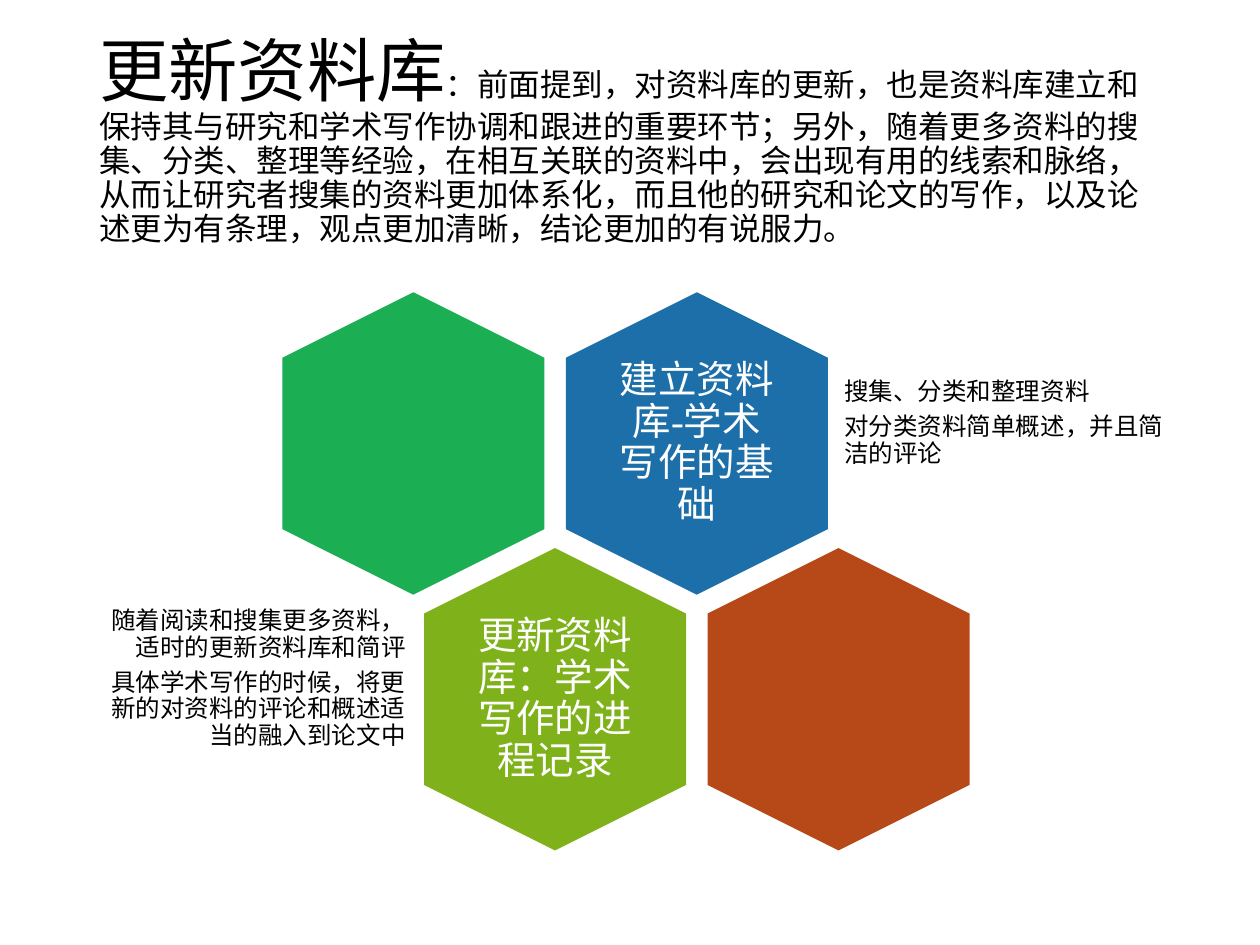
from pptx import Presentation
from pptx.dml.color import RGBColor
from pptx.enum import shapes, text
from pptx.util import Inches, Pt

BLACK = RGBColor(0x00, 0x00, 0x00)
WHITE = RGBColor(0xFF, 0xFF, 0xFF)
BLUE = RGBColor(0x1D, 0x6F, 0xA9)
GREEN = RGBColor(0x1C, 0xAE, 0x53)
LIME = RGBColor(0x7F, 0xB2, 0x1A)
RUST = RGBColor(0xB7, 0x49, 0x19)
FONT = "Times New Roman"
LEFT, CENTER, RIGHT = text.PP_ALIGN.LEFT, text.PP_ALIGN.CENTER, text.PP_ALIGN.RIGHT

TITLE = [
    ("更新资料库", 39.6),
    ("：前面提到，对资料库的更新，也是资料库建立和保持其与研究和学术写作协调和跟进的重要环节；"
     "另外，随着更多资料的搜集、分类、整理等经验，在相互关联的资料中，会出现有用的线索和脉络，"
     "从而让研究者搜集的资料更加体系化，而且他的研究和论文的写作，以及论述更为有条理，"
     "观点更加清晰，结论更加的有说服力。", 18),
]
HEXAGONS = [
    (0, 1, BLUE, "建立资料库-学术写作的基础"),
    (0, 0, GREEN, None),
    (1, 0, LIME, "更新资料库：学术写作的进程记录"),
    (1, 1, RUST, None),
]
NOTES = [
    (6.64, 2.64, 2.67, LEFT, ["搜集、分类和整理资料", "对分类资料简单概述，并且简洁的评论"]),
    (0.69, 4.67, 2.59, RIGHT, ["随着阅读和搜集更多资料，适时的更新资料库和简评",
                               "具体学术写作的时候，将更新的对资料的评论和概述适当的融入到论文中"]),
]

HEX_LENGTH, HEX_WIDTH = 2.4, 2.08
FIRST_X, FIRST_Y = 3.28, 3.52
STEP_X, STEP_Y = 2.25, 2.03
LABEL_W, LABEL_H = 1.43, 1.65


def add_text(s, x, y, w, h, paragraphs, color, align, inset, after=0.35):
    tf = s.shapes.add_textbox(Inches(x), Inches(y), Inches(w), Inches(h)).text_frame
    tf.word_wrap = True
    tf.vertical_anchor = text.MSO_ANCHOR.MIDDLE
    tf.margin_left = tf.margin_right = Inches(inset[0])
    tf.margin_top = tf.margin_bottom = Inches(inset[1])
    for i, runs in enumerate(paragraphs):
        p = tf.paragraphs[0] if i == 0 else tf.add_paragraph()
        p.alignment = align
        p.line_spacing = 0.9
        p.space_after = Pt(runs[0][1] * after)
        for words, size in runs:
            r = p.add_run()
            r.text = words
            r.font.name = FONT
            r.font.size = Pt(size)
            r.font.color.rgb = color


def add_hexagon(s, row, col, color, label):
    cx = FIRST_X + (col + row / 2) * STEP_X
    cy = FIRST_Y + row * STEP_Y
    sp = s.shapes.add_shape(
        shapes.MSO_SHAPE.HEXAGON,
        Inches(cx - HEX_LENGTH / 2), Inches(cy - HEX_WIDTH / 2),
        Inches(HEX_LENGTH), Inches(HEX_WIDTH))
    sp.rotation = 90
    sp.adjustments[0] = 0.25
    sp.shadow.inherit = False
    sp.fill.solid()
    sp.fill.fore_color.rgb = color
    sp.line.fill.background()
    if label:
        add_text(s, cx - LABEL_W / 2, cy - LABEL_H / 2, LABEL_W, LABEL_H,
                 [[(label, 22)]], WHITE, CENTER, (0.09, 0.09))


def main():
    prs = Presentation()
    prs.slide_width, prs.slide_height = Inches(10), Inches(7.5)
    s = prs.slides.add_slide(prs.slide_layouts[6])
    add_text(s, 0.69, 0.4, 8.62, 1.45, [TITLE], BLACK, LEFT, (0.1, 0.05), after=0)
    for hexagon in HEXAGONS:
        add_hexagon(s, *hexagon)
    for x, y, w, align, lines in NOTES:
        add_text(s, x, y, w, 1.44, [[(line, 14)] for line in lines],
                 BLACK, align, (0.06, 0.06))
    prs.save("out.pptx")


if __name__ == "__main__":
    main()
